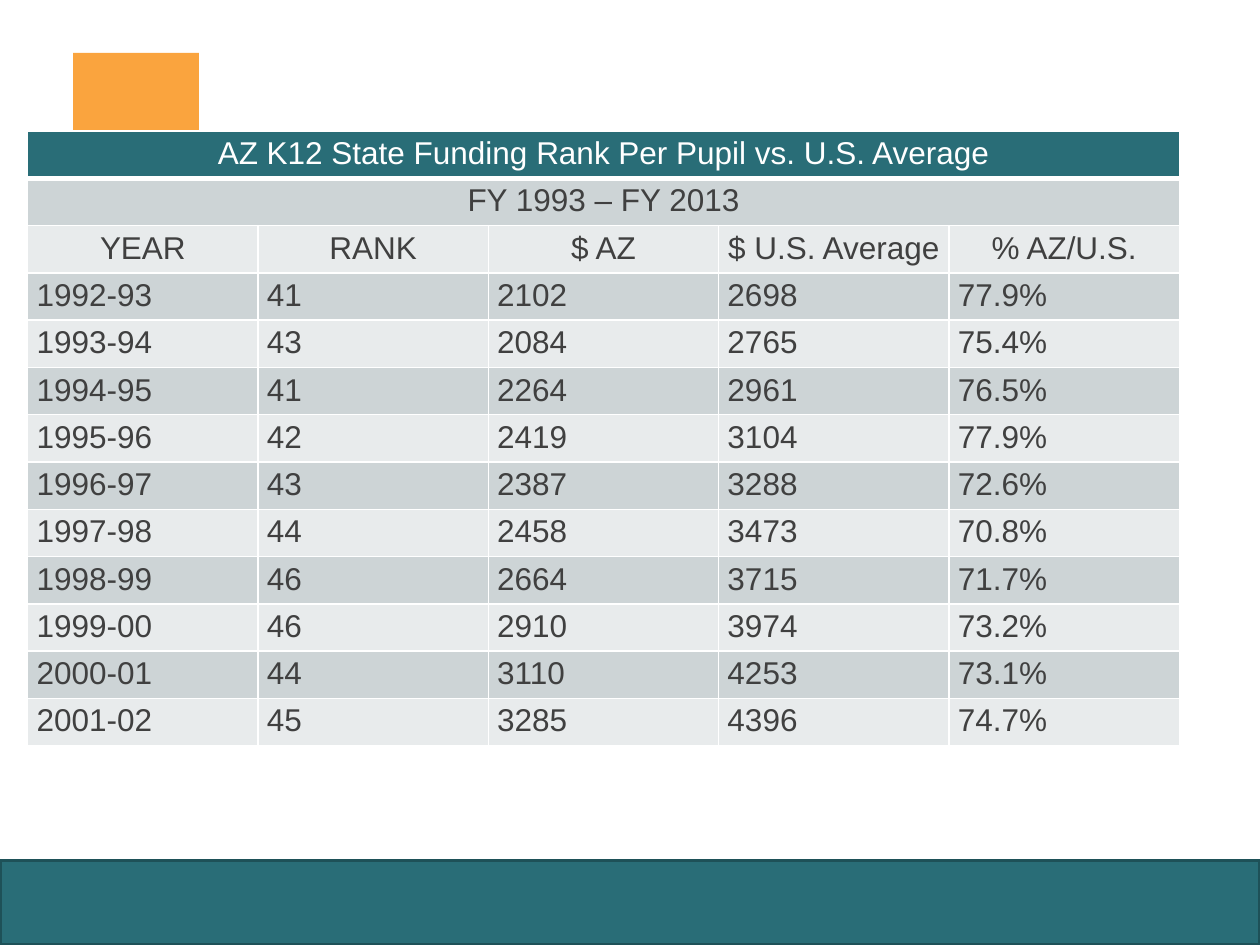
import dataclasses

import pptx
import pptx.dml.color
import pptx.enum.shapes
import pptx.enum.text
import pptx.oxml
import pptx.oxml.ns
import pptx.util

Inches = pptx.util.Inches
Pt = pptx.util.Pt

HEADING = "AZ K12 State Funding Rank Per Pupil vs. U.S. Average"
PERIOD = "FY 1993 – FY 2013"
COLUMNS = ["YEAR", "RANK", "$ AZ", "$ U.S. Average", "% AZ/U.S."]
FUNDING = [
    ("1992-93", 41, 2102, 2698, "77.9%"),
    ("1993-94", 43, 2084, 2765, "75.4%"),
    ("1994-95", 41, 2264, 2961, "76.5%"),
    ("1995-96", 42, 2419, 3104, "77.9%"),
    ("1996-97", 43, 2387, 3288, "72.6%"),
    ("1997-98", 44, 2458, 3473, "70.8%"),
    ("1998-99", 46, 2664, 3715, "71.7%"),
    ("1999-00", 46, 2910, 3974, "73.2%"),
    ("2000-01", 44, 3110, 4253, "73.1%"),
    ("2001-02", 45, 3285, 4396, "74.7%"),
]


@dataclasses.dataclass(frozen=True)
class Theme:
    teal: str = "296D77"
    teal_edge: str = "1E5158"
    orange: str = "FAA43E"
    band_dark: str = "CDD4D6"
    band_light: str = "E8EBEC"
    text: str = "404040"
    white: str = "FFFFFF"
    font: str = "Arial"
    size: int = 18
    grid: int = 1
    heading_rule: int = 3


THEME = Theme()


def rgb(color):
    return pptx.dml.color.RGBColor.from_string(color)


def add_block(slide, left, top, width, height, fill, edge=None):
    block = slide.shapes.add_shape(
        pptx.enum.shapes.MSO_SHAPE.RECTANGLE,
        Inches(left), Inches(top), Inches(width), Inches(height))
    block.shadow.inherit = False
    block.fill.solid()
    block.fill.fore_color.rgb = rgb(fill)
    if edge:
        block.line.color.rgb = rgb(edge)
        block.line.width = Pt(2)
    else:
        block.line.fill.background()


def set_borders(cell, row):
    widths = {"lnL": THEME.grid, "lnR": THEME.grid,
              "lnT": THEME.heading_rule if row == 1 else THEME.grid,
              "lnB": THEME.heading_rule if row == 0 else THEME.grid}
    properties = cell._tc.get_or_add_tcPr()
    for side, width in widths.items():
        properties.append(pptx.oxml.parse_xml(
            f'<a:{side} {pptx.oxml.ns.nsdecls("a")} w="{Pt(width)}"><a:solidFill>'
            f'<a:srgbClr val="{THEME.white}"/></a:solidFill></a:{side}>'))


def format_cell(cell, row):
    set_borders(cell, row)
    band = THEME.band_dark if row % 2 else THEME.band_light
    cell.fill.solid()
    cell.fill.fore_color.rgb = rgb(THEME.teal if row == 0 else band)
    cell.margin_left = cell.margin_right = Inches(0.07)
    cell.margin_top = cell.margin_bottom = Inches(0.04)
    paragraph = cell.text_frame.paragraphs[0]
    if row < 3:
        paragraph.alignment = pptx.enum.text.PP_ALIGN.CENTER
    paragraph.font.name = THEME.font
    paragraph.font.size = Pt(THEME.size)
    paragraph.font.bold = False
    paragraph.font.color.rgb = rgb(THEME.white if row == 0 else THEME.text)


def add_funding_table(slide):
    rows = [[HEADING], [PERIOD], COLUMNS, *FUNDING]
    width, row_height = Inches(9.14), Inches(4.88) // len(rows)
    table = slide.shapes.add_table(
        len(rows), len(COLUMNS), Inches(0.22), Inches(1.04),
        width, row_height * len(rows)).table
    for column in table.columns:
        column.width = width // len(COLUMNS)
    for row, values in enumerate(rows):
        table.rows[row].height = row_height
        for column, value in enumerate(values):
            table.cell(row, column).text = str(value)
        for cell in table.rows[row].cells:
            format_cell(cell, row)
        if len(values) == 1:
            table.cell(row, 0).merge(table.cell(row, len(COLUMNS) - 1))


def main():
    deck = pptx.Presentation()
    deck.slide_width = Inches(10)
    deck.slide_height = Inches(7.5)
    slide = deck.slides.add_slide(deck.slide_layouts[6])
    add_block(slide, 0, 6.83, 10, 0.67, THEME.teal, THEME.teal_edge)
    add_block(slide, 0.58, 0.42, 1, 1, THEME.orange)
    add_funding_table(slide)
    deck.save("out.pptx")


if __name__ == "__main__":
    main()
